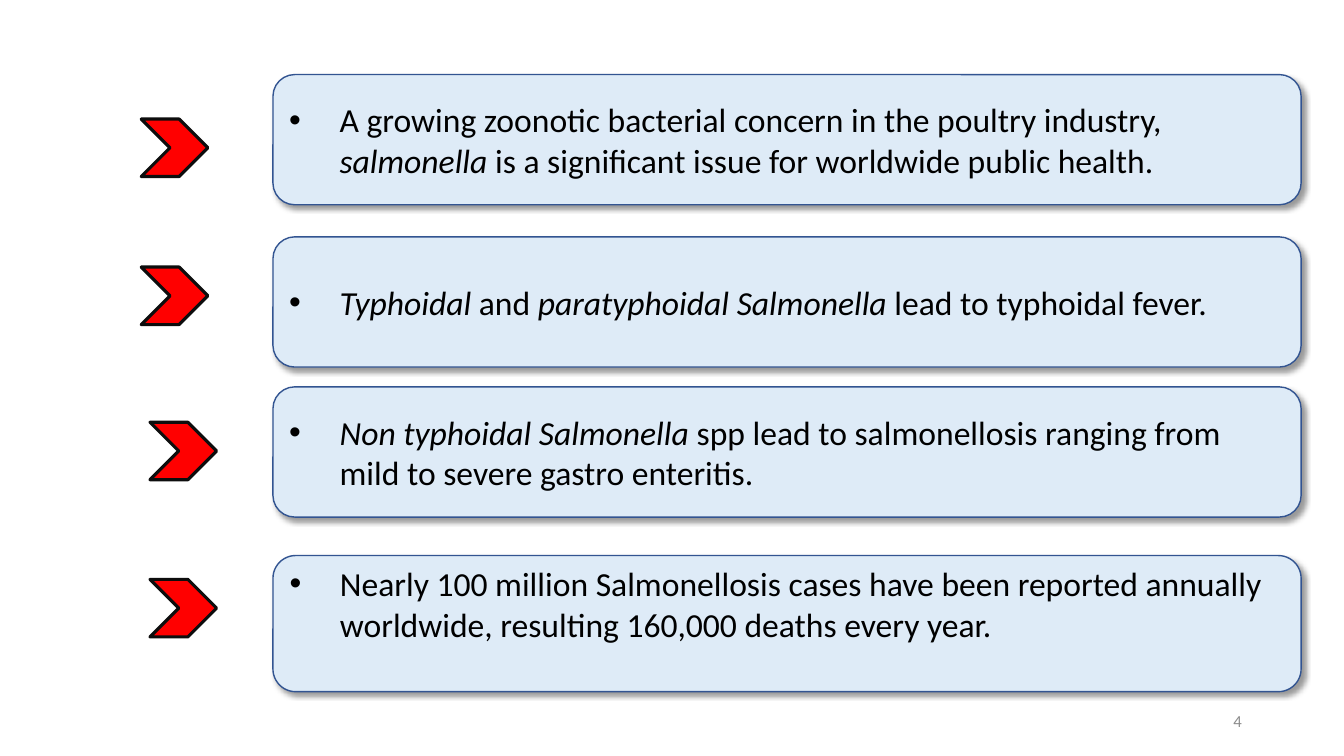
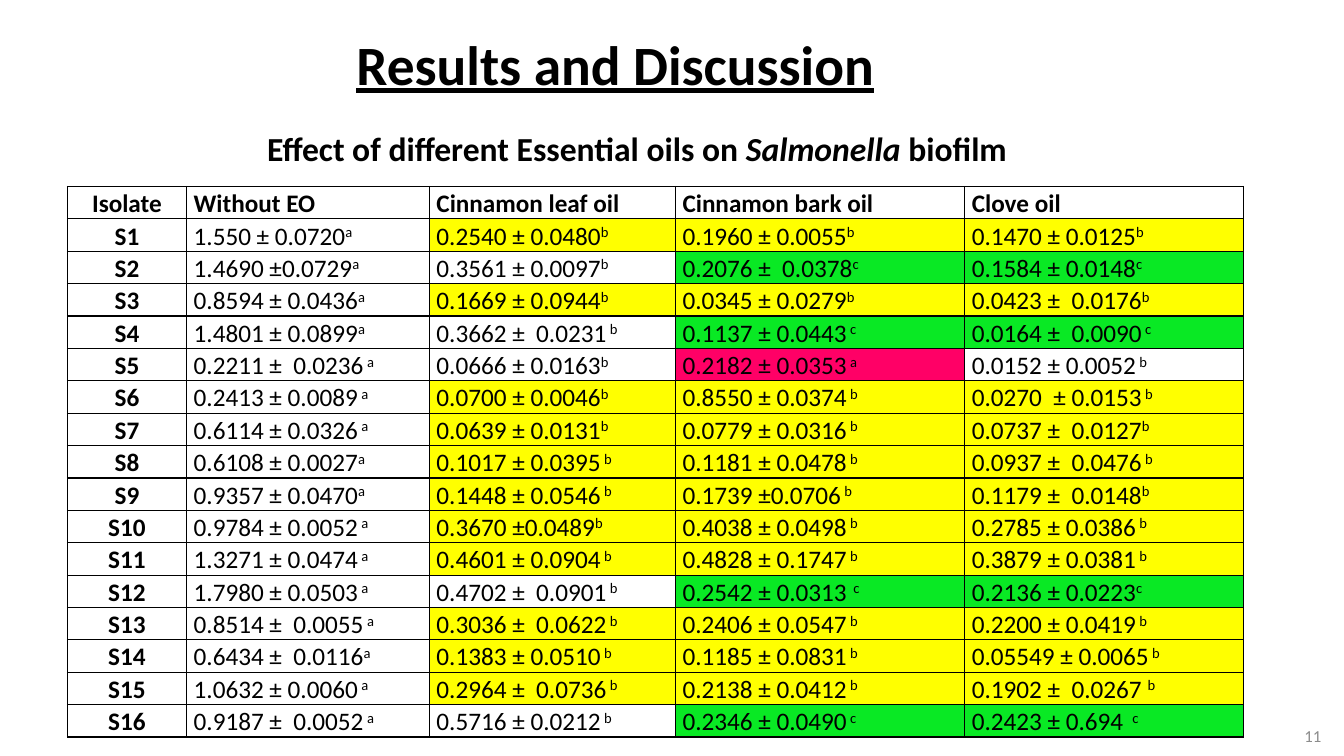
"""Build a Salmonella facts slide and a biofilm results table slide."""
from lxml import etree
from pptx import Presentation
from pptx import util as u
from pptx.dml.color import RGBColor
from pptx.enum import shapes, text
from pptx.oxml.ns import qn

Cm, Pt = u.Cm, u.Pt
BLACK = RGBColor(0x00, 0x00, 0x00)
WHITE = RGBColor(0xFF, 0xFF, 0xFF)
GREY = RGBColor(0x8C, 0x8C, 0x8C)
PALE_BLUE = RGBColor(0xDE, 0xEB, 0xF7)
BLUE = RGBColor(0x32, 0x54, 0x91)
RED = RGBColor(0xFF, 0x00, 0x00)
NEAR_BLACK = RGBColor(0x0D, 0x0D, 0x0D)
YELLOW = RGBColor(0xFF, 0xFF, 0x00)
GREEN = RGBColor(0x09, 0xE9, 0x24)
PINK = RGBColor(0xFF, 0x00, 0x66)
FONT = "Calibri"

FACTS = [
    (1.88, 3.28, 3.56, 3.0, "A growing zoonotic bacterial concern in the poultry industry, "
     "*salmonella *is a significant issue for worldwide public health."),
    (5.97, 3.28, 3.56, 6.73, "*Typhoidal* and *paratyphoidal Salmonella* lead to typhoidal fever."),
    (9.75, 3.28, 3.78, 10.64, "*Non typhoidal Salmonella *spp lead to salmonellosis "
     "ranging from mild to severe gastro enteritis."),
    (14.0, 3.43, 3.78, 14.6, "Nearly 100 million Salmonellosis cases have been reported annually "
     "worldwide, resulting 160,000 deaths every year."),
]
LAST_BOTTOM_INSET = 1.14

HEADINGS = ["Isolate", "Without EO", "Cinnamon leaf oil", "Cinnamon bark oil", "Clove oil"]
COLUMN_WIDTHS = [3.0, 6.12, 6.2, 7.29, 7.03]
READINGS = [
    "1.550 ± 0.0720^a|0.2540 ± 0.0480^b|0.1960 ± 0.0055^b|0.1470 ± 0.0125^b",
    "1.4690 ±0.0729^a|0.3561 ± 0.0097^b|0.2076 ±  0.0378^c|0.1584 ± 0.0148^c",
    "0.8594 ± 0.0436^a|0.1669 ± 0.0944^b|0.0345 ± 0.0279^b|0.0423 ±  0.0176^b",
    "1.4801 ± 0.0899^a|0.3662 ±  0.0231^ b|0.1137 ± 0.0443^ c|0.0164 ±  0.0090^ c",
    "0.2211 ±  0.0236^ a|0.0666 ± 0.0163^b|0.2182 ± 0.0353^ a|0.0152 ± 0.0052^ b",
    "0.2413 ± 0.0089^ a|0.0700 ± 0.0046^b|0.8550 ± 0.0374^ b|0.0270  ± 0.0153^ b",
    "0.6114 ± 0.0326^ a|0.0639 ± 0.0131^b|0.0779 ± 0.0316^ b|0.0737 ±  0.0127^b",
    "0.6108 ± 0.0027^a|0.1017 ± 0.0395^ b|0.1181 ± 0.0478^ b|0.0937 ±  0.0476^ b",
    "0.9357 ± 0.0470^a|0.1448 ± 0.0546^ b|0.1739 ±0.0706^ b|0.1179 ±  0.0148^b",
    "0.9784 ± 0.0052^ a|0.3670 ±0.0489^b|0.4038 ± 0.0498^ b|0.2785 ± 0.0386^ b",
    "1.3271 ± 0.0474^ a|0.4601 ± 0.0904^ b|0.4828 ± 0.1747^ b|0.3879 ± 0.0381^ b",
    "1.7980 ± 0.0503^ a|0.4702 ±  0.0901^ b|0.2542 ± 0.0313^  c|0.2136 ± 0.0223^c",
    "0.8514 ±  0.0055^ a|0.3036 ±  0.0622^ b|0.2406 ± 0.0547^ b|0.2200 ± 0.0419^ b",
    "0.6434 ±  0.0116^a|0.1383 ± 0.0510^ b|0.1185 ± 0.0831^ b|0.05549 ± 0.0065^ b",
    "1.0632 ± 0.0060^ a|0.2964 ±  0.0736^ b|0.2138 ± 0.0412^ b|0.1902 ±  0.0267 ^b",
    "0.9187 ±  0.0052^ a|0.5716 ± 0.0212^ b|0.2346 ± 0.0490^ c|0.2423 ± 0.694 ^ c",
]


def sub(parent, tag, **attrs):
    """Append a child element with the given attributes."""
    child = etree.SubElement(parent, qn(tag))
    for name, value in attrs.items():
        child.set(name, str(value))
    return child


def style_run(r, size, color=BLACK, bold=False):
    """Give a run the deck's font."""
    f = r.font
    f.name, f.size, f.bold = FONT, Pt(size), bold
    f.color.rgb = color


def add_runs(p, marked, size, bold=False):
    """Write text in which asterisks enclose italics and a caret starts a superscript."""
    body, _, letter = marked.partition("^")
    for i, part in enumerate(body.split("*")):
        if part:
            r = p.add_run()
            r.text = part
            style_run(r, size, bold=bold)
            r.font.italic = i % 2 == 1
    if letter:
        r = p.add_run()
        r.text = letter
        style_run(r, size, bold=bold)
        r.font._element.set("baseline", "30000")


def add_text_box(s, left, top, width, height):
    """Add a wrapping text box and return its frame."""
    tf = s.shapes.add_textbox(Cm(left), Cm(top), Cm(width), Cm(height)).text_frame
    tf.word_wrap = True
    return tf


def add_page_number(s, left, top, number):
    """Write the grey page number."""
    tf = add_text_box(s, left, top, 7.62, 1.01)
    tf.vertical_anchor = text.MSO_ANCHOR.MIDDLE
    tf.text = str(number)
    p = tf.paragraphs[0]
    p.alignment = text.PP_ALIGN.RIGHT
    style_run(p.runs[0], 12, GREY)


def add_filled_shape(s, kind, left, top, width, height, fill, line, weight):
    """Add a preset shape with a fill and an outline."""
    sp = s.shapes.add_shape(kind, Cm(left), Cm(top), Cm(width), Cm(height))
    sp.shadow.inherit = False
    sp.fill.solid()
    sp.fill.fore_color.rgb = fill
    sp.line.color.rgb = line
    sp.line.width = Pt(weight)
    return sp


def add_drop_shadow(sp):
    """Cast a soft shadow to the lower right."""
    effects = sp._element.spPr.find(qn("a:effectLst"))
    shadow = sub(effects, "a:outerShdw", blurRad=Pt(4), dist=Pt(3), dir=45 * 60000,
                 algn="tl", rotWithShape=0)
    sub(sub(shadow, "a:srgbClr", val=BLACK), "a:alpha", val=40000)


def add_fact(s, top, height, marker_left, marker_top, fact):
    """Place one fact panel and its chevron."""
    sp = add_filled_shape(s, shapes.MSO_SHAPE.ROUNDED_RECTANGLE, 6.88, top, 25.91, height,
                          PALE_BLUE, BLUE, 1)
    add_drop_shadow(sp)
    tf = sp.text_frame
    tf.word_wrap = True
    tf.vertical_anchor = text.MSO_ANCHOR.MIDDLE
    p = tf.paragraphs[0]
    p.alignment = text.PP_ALIGN.LEFT
    pPr = p._p.get_or_add_pPr()
    pPr.set("marL", str(Cm(1.27)))
    pPr.set("indent", str(-Cm(1.27)))
    sub(pPr, "a:buFont", typeface="Arial")
    sub(pPr, "a:buChar", char="•")
    add_runs(p, fact, 24)
    add_filled_shape(s, shapes.MSO_SHAPE.CHEVRON, marker_left, marker_top, 1.68, 1.45,
                     RED, NEAR_BLACK, 2.25)
    return sp


def build_facts_slide(prs):
    """Build the slide of four fact panels."""
    s = prs.slides.add_slide(prs.slide_layouts[6])
    add_page_number(s, 23.93, 17.65, 4)
    panels = [add_fact(s, *fact) for fact in FACTS]
    panels[-1].text_frame.margin_bottom = Cm(LAST_BOTTOM_INSET)


def row_fills(row):
    """Colour treated cells by how their letters differ within the row."""
    letters = [cell[-1] for cell in row[2:]]
    if set(letters) == {"b"}:
        colors = {"b": YELLOW}
    else:
        colors = {"a": PINK, "b": WHITE, "c": GREEN}
    return [WHITE, WHITE] + [colors[letter] for letter in letters]


def fill_cell(cell, marked, fill, bold, centred):
    """Write, border and colour one table cell."""
    tcPr = cell._tc.get_or_add_tcPr()
    for side in ("a:lnL", "a:lnR", "a:lnT", "a:lnB"):
        line = sub(tcPr, side, w=Pt(1))
        sub(sub(line, "a:solidFill"), "a:srgbClr", val=BLACK)
    cell.fill.solid()
    cell.fill.fore_color.rgb = fill
    cell.margin_left = cell.margin_right = Cm(0.18)
    cell.margin_top = cell.margin_bottom = 0
    cell.vertical_anchor = text.MSO_ANCHOR.BOTTOM
    p = cell.text_frame.paragraphs[0]
    p.line_spacing = 1.07
    p.alignment = text.PP_ALIGN.CENTER if centred else text.PP_ALIGN.LEFT
    add_runs(p, marked, 18, bold)


def add_results_table(s, left, top):
    """Place the table of biofilm readings."""
    rows = [[f"S{n}"] + line.split("|") for n, line in enumerate(READINGS, 1)]
    fills = [[WHITE] * len(HEADINGS)] + [row_fills(row) for row in rows]
    rows.insert(0, HEADINGS)
    row_height = 0.79
    table = s.shapes.add_table(len(rows), len(HEADINGS), Cm(left), Cm(top),
                               Cm(sum(COLUMN_WIDTHS)), Cm(row_height * len(rows))).table
    table.first_row = table.horz_banding = False
    for column, width in zip(table.columns, COLUMN_WIDTHS):
        column.width = Cm(width)
    for i, row in enumerate(rows):
        table.rows[i].height = Cm(row_height)
        for j, marked in enumerate(row):
            fill_cell(table.cell(i, j), marked, fills[i][j], i == 0 or j == 0, j == 0)


def add_title(s, left, top, width, height, title):
    """Set the underlined slide title."""
    sp = s.shapes.title
    sp.left, sp.top, sp.width, sp.height = Cm(left), Cm(top), Cm(width), Cm(height)
    tf = sp.text_frame
    tf.text = title
    tf.auto_size = text.MSO_AUTO_SIZE.NONE
    tf.vertical_anchor = text.MSO_ANCHOR.MIDDLE
    p = tf.paragraphs[0]
    p.alignment = text.PP_ALIGN.CENTER
    p.line_spacing = 0.9
    style_run(p.runs[0], 39.6, bold=True)
    p.runs[0].font.underline = True


def build_results_slide(prs):
    """Build the slide with the results table."""
    s = prs.slides.add_slide(prs.slide_layouts[5])
    add_title(s, 4.98, 0.84, 21.06, 1.7, "Results and Discussion")
    add_page_number(s, 25.93, 18.03, 11)
    add_results_table(s, 1.7, 4.7)
    tf = add_text_box(s, 6.48, 3.1, 20.17, 1.27)
    add_runs(tf.paragraphs[0], "Effect of different Essential oils on *Salmonella *biofilm", 24, True)


def main():
    """Build and save the presentation."""
    prs = Presentation()
    prs.slide_width, prs.slide_height = Cm(33.87), Cm(19.05)
    build_facts_slide(prs)
    build_results_slide(prs)
    prs.save("out.pptx")


if __name__ == "__main__":
    main()
